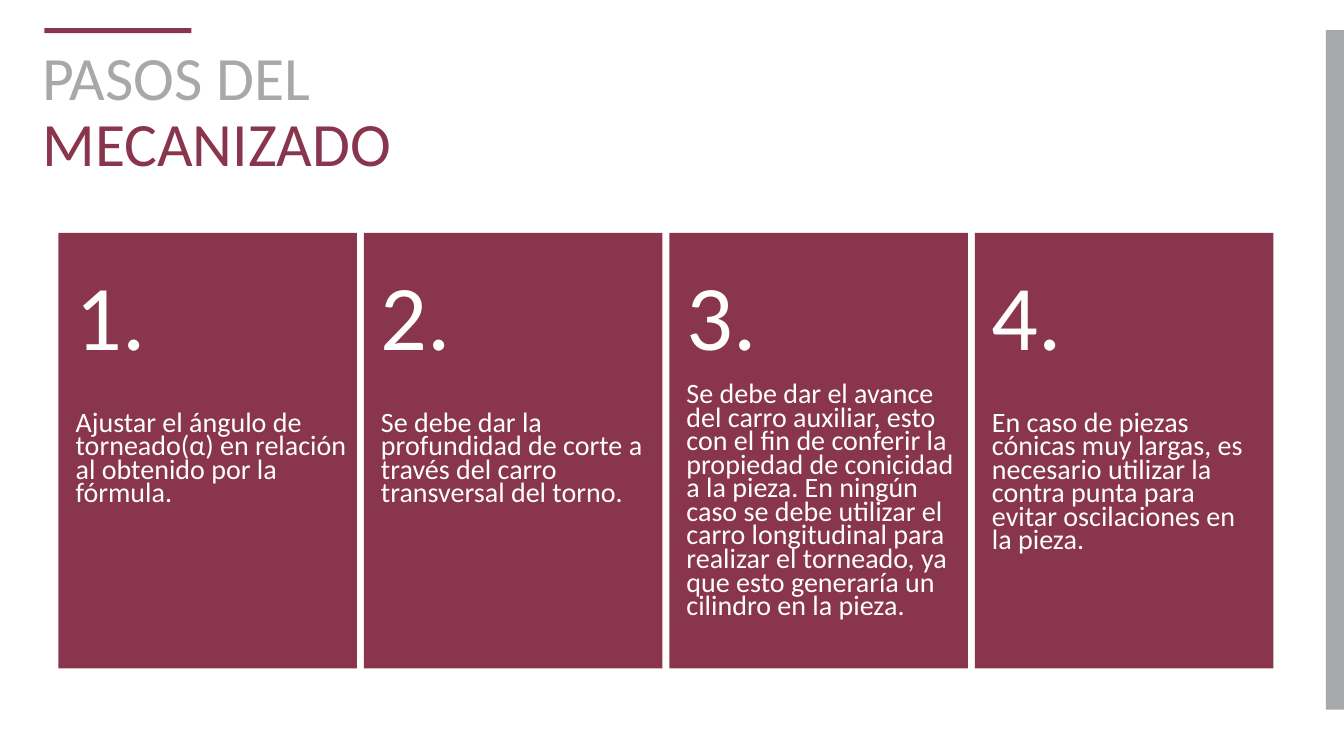
from pptx import Presentation
from pptx.dml.color import RGBColor
from pptx.enum.shapes import MSO_SHAPE
from pptx.enum.text import MSO_ANCHOR, MSO_AUTO_SIZE, PP_ALIGN
from pptx.oxml.xmlchemy import OxmlElement
from pptx.util import Inches, Pt

RECT = MSO_SHAPE.RECTANGLE
TOP, MIDDLE = MSO_ANCHOR.TOP, MSO_ANCHOR.MIDDLE
NO_FIT = MSO_AUTO_SIZE.NONE
LEFT = PP_ALIGN.LEFT

COLORS = {"wine": "88354D", "gray": "A7A8AA", "white": "FFFFFF"}
FONT = "Calibri"
CARD_LEFT, CARD_TOP, CARD_W, CARD_H, CARD_PITCH = 0.58, 2.31, 2.96, 4.32, 3.03
TEXT_OFFSET = 0.07

STEPS = [
    ("Ajustar el ángulo de torneado(α) en relación al obtenido por la fórmula.",
     4.05, 2.89, 1.11),
    ("Se debe dar la profundidad de corte a través del carro transversal del torno.",
     4.05, 2.89, 1.11),
    ("Se debe dar el avance del carro auxiliar, esto con el fin de conferir la "
     "propiedad de conicidad a la pieza. En ningún caso se debe utilizar el carro "
     "longitudinal para realizar el torneado, ya que esto generaría un cilindro en "
     "la pieza.", 3.77, 2.89, 1.11),
    ("En caso de piezas cónicas muy largas, es necesario utilizar la contra punta "
     "para evitar oscilaciones en la pieza.", 4.05, 2.77, 1.59),
]


class Deck:
    """Holds the style and the current slide."""

    def __init__(self):
        self.prs = Presentation()
        self.prs.slide_width = Inches(13.33)
        self.prs.slide_height = Inches(7.5)
        self.s = self.prs.slides.add_slide(self.prs.slide_layouts[1])

    def rect(self, x, y, w, h, color):
        sp = self.s.shapes.add_shape(RECT, Inches(x), Inches(y), Inches(w), Inches(h))
        sp.shadow.inherit = False
        sp.fill.solid()
        sp.fill.fore_color.rgb = RGBColor.from_string(COLORS[color])
        sp.line.fill.background()

    def run(self, p, text, size, color):
        r = p.add_run()
        r.text = text
        r.font.name = FONT
        r.font.size = Pt(size)
        r.font.color.rgb = RGBColor.from_string(COLORS[color])

    def frame(self, sp, x, y, w, h, anchor, spacing, before):
        sp.left, sp.top, sp.width, sp.height = Inches(x), Inches(y), Inches(w), Inches(h)
        tf = sp.text_frame
        tf.word_wrap = True
        tf.auto_size = NO_FIT
        tf.vertical_anchor = anchor
        p = tf.paragraphs[0]
        p.alignment = LEFT
        p.line_spacing = spacing
        p.space_before = Pt(before)
        return p

    def title(self, first, second, x, y, w, h):
        p = self.frame(self.s.shapes.title, x, y, w, h, MIDDLE, 0.9, 0)
        self.run(p, first, 44, "gray")
        p.add_line_break()
        self.run(p, second, 44, "wine")

    def body(self, text, x, y, w, h):
        sp = self.s.placeholders[1]
        sp.element.getparent().append(sp.element)
        p = self.frame(sp, x, y, w, h, TOP, 0.7, 10)
        pPr = p._p.get_or_add_pPr()
        pPr.set("marL", "0")
        pPr.set("indent", "0")
        pPr.append(OxmlElement("a:buNone"))
        self.run(p, text, 20, "white")

    def text(self, text, x, y, w, h, size, spacing):
        sp = self.s.shapes.add_textbox(Inches(x), Inches(y), Inches(w), Inches(h))
        p = self.frame(sp, x, y, w, h, TOP, spacing, 10)
        self.run(p, text, size, "white")

    def save(self):
        self.prs.save("out.pptx")


def main():
    deck = Deck()
    deck.rect(13.15, 0.3, 0.19, 6.74, "gray")
    deck.title("PASOS DEL", "MECANIZADO", 0.32, 0.4, 11.5, 1.45)
    deck.rect(0.44, 0.28, 1.46, 0.05, "wine")
    for i, (step, y, w, h) in enumerate(STEPS):
        x = CARD_LEFT + i * CARD_PITCH
        deck.rect(x, CARD_TOP, CARD_W, CARD_H, "wine")
        x += TEXT_OFFSET
        if i == 0:
            deck.body(step, x, y, w, h)
        else:
            deck.text(step, x, y, w, h, 20, 0.7)
        deck.text(f"{i + 1}.", x, 2.64, 1.12, 1.11, 66, 0.9)
    deck.save()


if __name__ == "__main__":
    main()
